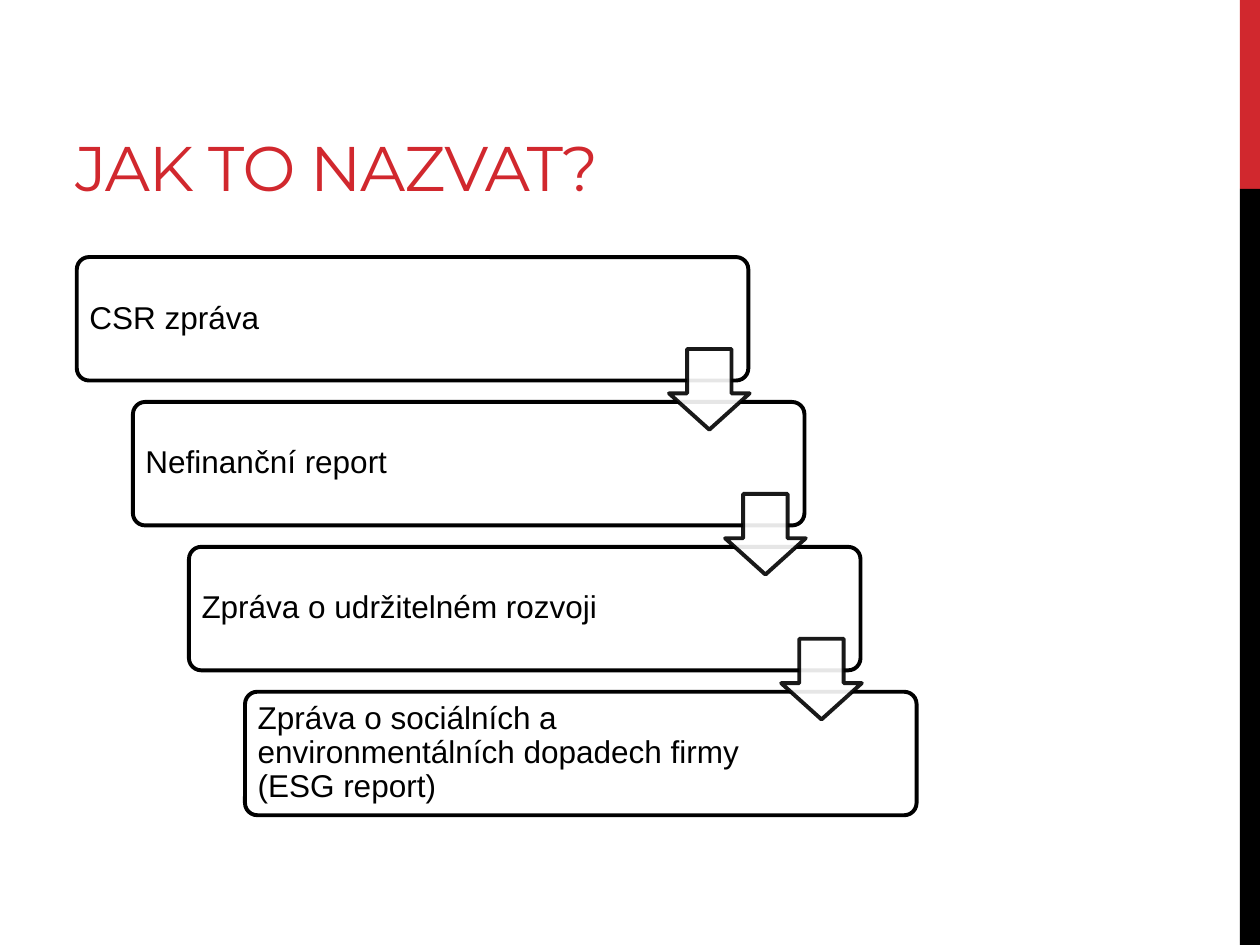
from lxml.etree import SubElement
from pptx import Presentation
from pptx.dml.color import RGBColor
from pptx.enum.shapes import MSO_SHAPE
from pptx.enum.text import MSO_ANCHOR
from pptx.oxml.ns import qn
from pptx.util import Inches, Pt

TITLE = "JAK TO NAZVAT?"
NAMES = [
    "CSR zpráva",
    "Nefinanční report",
    "Zpráva o udržitelném rozvoji",
    "Zpráva o sociálních a environmentálních dopadech firmy (ESG report)",
]
COLORS = {"red": "D1282E", "black": "000000", "white": "FFFFFF"}
BARS = [("red", 0, 1.5), ("black", 1.5, 6)]
TITLE_FONT = {"name": "Montserrat", "size": Pt(36)}
STEP_FONT = {"name": "Arial", "size": Pt(18)}
STEP_PARAGRAPH = {"line_spacing": 0.9, "space_after": Pt(6.3)}

LEFT, TOP = 0.61, 2.04
STEP_X, STEP_Y = 0.445, 1.15
BOX_W, BOX_H = 5.33, 0.98
TEXT_W, TEXT_INSET = 4.2, 0.03
ARROW_X, ARROW_Y, ARROW_SIZE = 4.7, 0.73, 0.64


def rgb(name):
    return RGBColor.from_string(COLORS[name])


def set_all(target, values):
    for key, value in values.items():
        setattr(target, key, value)


def add_shape(slide, kind, box, fill, line=None, adjustments=(), alpha=None):
    sp = slide.shapes.add_shape(kind, *map(Inches, box))
    sp.shadow.inherit = False
    sp.fill.solid()
    sp.fill.fore_color.rgb = rgb(fill)
    if line:
        sp.line.color.rgb = rgb(line)
        sp.line.width = Pt(2.25)
    else:
        sp.line.fill.background()
    for i, value in enumerate(adjustments):
        sp.adjustments[i] = value
    if alpha:
        for color in sp._element.spPr.iter(qn("a:srgbClr")):
            SubElement(color, qn("a:alpha"), val=str(alpha * 1000))
    return sp


def add_text(slide, box, text, font, color, anchor, inset=None, paragraph=None):
    tf = slide.shapes.add_textbox(*map(Inches, box)).text_frame
    tf.word_wrap = True
    tf.vertical_anchor = anchor
    if inset is not None:
        for side in ("left", "top", "right", "bottom"):
            setattr(tf, f"margin_{side}", Inches(inset))
    p = tf.paragraphs[0]
    set_all(p, paragraph or {})
    r = p.add_run()
    r.text = text
    set_all(r.font, font)
    r.font.color.rgb = rgb(color)
    return r


def main():
    prs = Presentation()
    prs.slide_width, prs.slide_height = Inches(10), Inches(7.5)
    s = prs.slides.add_slide(prs.slide_layouts[6])

    for color, top, height in BARS:
        add_shape(s, MSO_SHAPE.RECTANGLE, (9.84, top, 0.16, height), color)

    r = add_text(s, (0.5, 0.17, 7.97, 1.5), TITLE, TITLE_FONT, "red", MSO_ANCHOR.BOTTOM)
    r._r.get_or_add_rPr().set("spc", "-60")

    corners = [(LEFT + i * STEP_X, TOP + i * STEP_Y) for i in range(len(NAMES))]
    for name, (x, y) in zip(NAMES, corners):
        add_shape(s, MSO_SHAPE.ROUNDED_RECTANGLE, (x, y, BOX_W, BOX_H),
                  "white", "black", [0.1])
        text_box = (x + TEXT_INSET, y + TEXT_INSET, TEXT_W, BOX_H - 2 * TEXT_INSET)
        add_text(s, text_box, name, STEP_FONT, "black", MSO_ANCHOR.MIDDLE,
                 0.07, STEP_PARAGRAPH)

    for x, y in corners[:-1]:
        add_shape(s, MSO_SHAPE.DOWN_ARROW,
                  (x + ARROW_X, y + ARROW_Y, ARROW_SIZE, ARROW_SIZE),
                  "white", "black", [0.55, 0.45], alpha=90)

    prs.save("out.pptx")


if __name__ == "__main__":
    main()
